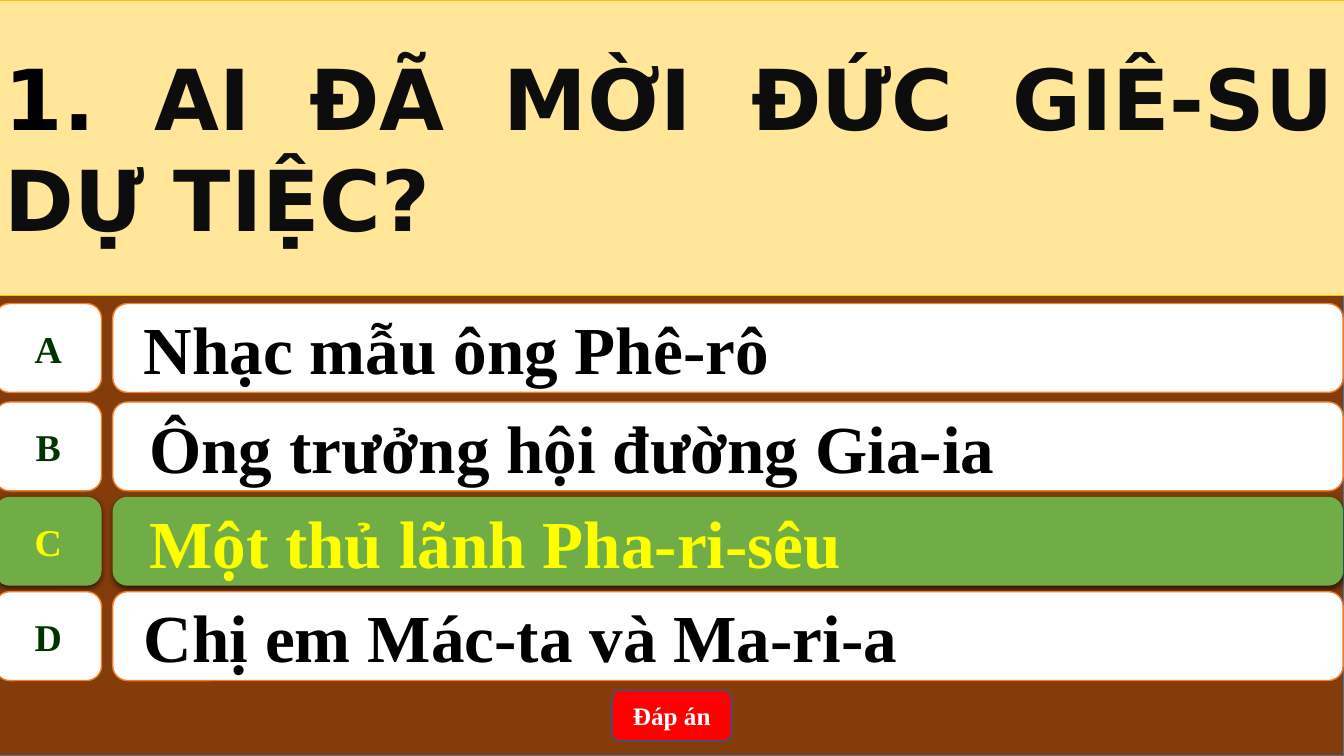
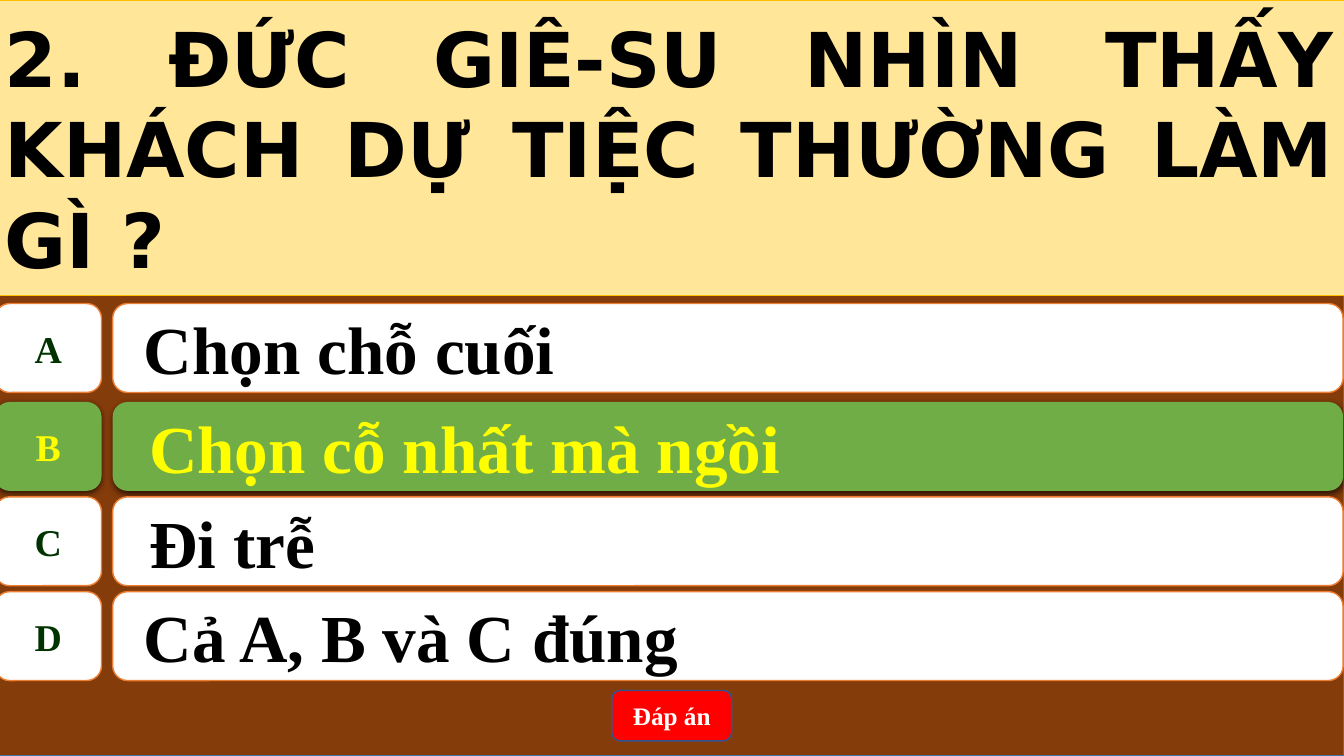
from dataclasses import dataclass

from lxml import etree
from pptx import Presentation
from pptx.dml.color import RGBColor
from pptx.enum.shapes import MSO_SHAPE
from pptx.enum.text import MSO_ANCHOR, PP_ALIGN
from pptx.oxml.ns import qn
from pptx.util import Cm, Pt

RECT = MSO_SHAPE.RECTANGLE
ROUNDED = MSO_SHAPE.ROUNDED_RECTANGLE
LETTER_BOX = MSO_SHAPE.FLOWCHART_ALTERNATE_PROCESS
MIDDLE = MSO_ANCHOR.MIDDLE
LEFT, CENTER, JUSTIFY = PP_ALIGN.LEFT, PP_ALIGN.CENTER, PP_ALIGN.JUSTIFY


@dataclass(frozen=True)
class Theme:
    question_font: str = "DejaVu Sans"
    answer_font: str = "Times New Roman"
    # Type sizes
    answer_size: int = 48
    letter_size: int = 27
    button_size: int = 18
    # Colours
    brown: str = "843C0B"
    brown_edge: str = "43739E"
    cream: str = "FFE699"
    gold: str = "FFC000"
    white: str = "FFFFFF"
    orange: str = "ED7D31"
    dark_green: str = "003300"
    green: str = "70AD47"
    yellow: str = "FFFF00"
    red: str = "FF0000"
    button_edge: str = "325491"
    black: str = "000000"
    soft_black: str = "0D0D0D"


THEME = Theme()

# Layout in centimetres
SLIDE_W, SLIDE_H = 33.87, 19.05
BAND_LEFT, BAND_W, QUESTION_H = -0.13, 34, 7.44
LETTER_W, ANSWER_LEFT, ANSWER_W, ROW_H = 2.69, 2.84, 31.01, 2.24
# Each row: letter, top, left margin of the answer
ROWS = (("A", 7.65, 0.68), ("B", 10.13, 0.81),
        ("C", 12.52, 0.81), ("D", 14.91, 0.68))

# Each question: number, text, size, text colour, answers, right letter
QUESTIONS = (
    ("1. ", "AI ĐÃ MỜI ĐỨC GIÊ-SU DỰ TIỆC?", 60, THEME.soft_black,
     ("Nhạc mẫu ông Phê-rô", "Ông trưởng hội đường Gia-ia",
      "Một thủ lãnh Pha-ri-sêu", "Chị em Mác-ta và Ma-ri-a"), "C"),
    ("2. ", "ĐỨC GIÊ-SU NHÌN THẤY KHÁCH DỰ TIỆC THƯỜNG LÀM GÌ ?", 54, THEME.black,
     ("Chọn chỗ cuối", "Chọn cỗ nhất mà ngồi",
      "Đi trễ", "Cả A, B và C đúng"), "B"),
)


def add_panel(slide, kind, box, fill, edge=None, edge_width=1):
    """Add a filled shape; box is left, top, width, height in centimetres."""
    panel = slide.shapes.add_shape(kind, *(Cm(length) for length in box))
    panel.shadow.inherit = False
    panel.fill.solid()
    panel.fill.fore_color.rgb = RGBColor.from_string(fill)
    if edge:
        panel.line.color.rgb = RGBColor.from_string(edge)
        panel.line.width = Pt(edge_width)
    else:
        panel.line.fill.background()
    return panel


def style_run(run, font, size, color):
    run.font.name = font
    run.font.size = Pt(size)
    run.font.bold = True
    run.font.color.rgb = RGBColor.from_string(color)


def write_label(panel, text, size, color, align=CENTER, wrap=True):
    frame = panel.text_frame
    frame.text = text
    frame.word_wrap = wrap
    frame.vertical_anchor = MIDDLE
    paragraph = frame.paragraphs[0]
    paragraph.alignment = align
    style_run(paragraph.runs[0], THEME.answer_font, size, color)


def add_drop_shadow(panel):
    effects = panel.element.spPr.find(qn("a:effectLst"))
    shadow = etree.SubElement(effects, qn("a:outerShdw"), blurRad=str(Pt(4.5)),
                              dist=str(Pt(1.5)), dir="5400000", rotWithShape="0")
    tint = etree.SubElement(shadow, qn("a:srgbClr"), val=THEME.black)
    etree.SubElement(tint, qn("a:alpha"), val="63000")


def add_question(slide, number, question, size, color):
    band = add_panel(slide, RECT, (BAND_LEFT, 0, BAND_W, QUESTION_H),
                     THEME.cream, THEME.gold, 0.5)
    frame = band.text_frame
    frame.word_wrap = True
    frame.vertical_anchor = MIDDLE
    paragraph = frame.paragraphs[0]
    paragraph.alignment = JUSTIFY
    for text, run_color in ((number, THEME.black), (question, color)):
        run = paragraph.add_run()
        run.text = text
        style_run(run, THEME.question_font, size, run_color)


def add_answer_row(slide, row, answer, is_right):
    letter, top, margin = row
    if is_right:
        fill, edge = THEME.green, None
        letter_color = answer_color = THEME.yellow
    else:
        fill, edge = THEME.white, THEME.orange
        letter_color, answer_color = THEME.dark_green, THEME.black

    answer_bar = add_panel(slide, ROUNDED, (ANSWER_LEFT, top, ANSWER_W, ROW_H), fill, edge)
    write_label(answer_bar, answer, THEME.answer_size, answer_color, LEFT)
    answer_bar.text_frame.margin_left = Cm(margin)

    letter_box = add_panel(slide, LETTER_BOX, (BAND_LEFT, top, LETTER_W, ROW_H), fill, edge)
    write_label(letter_box, letter, THEME.letter_size, letter_color, wrap=False)

    if is_right:
        add_drop_shadow(answer_bar)
        add_drop_shadow(letter_box)


def add_answer_button(slide):
    button = add_panel(slide, ROUNDED, (15.42, 17.4, 3.02, 1.27),
                       THEME.red, THEME.button_edge)
    write_label(button, "Đáp án", THEME.button_size, THEME.white)


def add_quiz_slide(deck, number, question, size, color, answers, right_letter):
    slide = deck.slides.add_slide(deck.slide_layouts[6])
    # Brown backdrop and question band
    add_panel(slide, RECT, (BAND_LEFT, 0, BAND_W, SLIDE_H), THEME.brown, THEME.brown_edge)
    add_question(slide, number, question, size, color)
    # Answers, with the right one highlighted
    for row, answer in zip(ROWS, answers):
        add_answer_row(slide, row, answer, row[0] == right_letter)
    add_answer_button(slide)


def main():
    deck = Presentation()
    deck.slide_width, deck.slide_height = Cm(SLIDE_W), Cm(SLIDE_H)
    for question in QUESTIONS:
        add_quiz_slide(deck, *question)
    deck.save("out.pptx")


if __name__ == "__main__":
    main()
